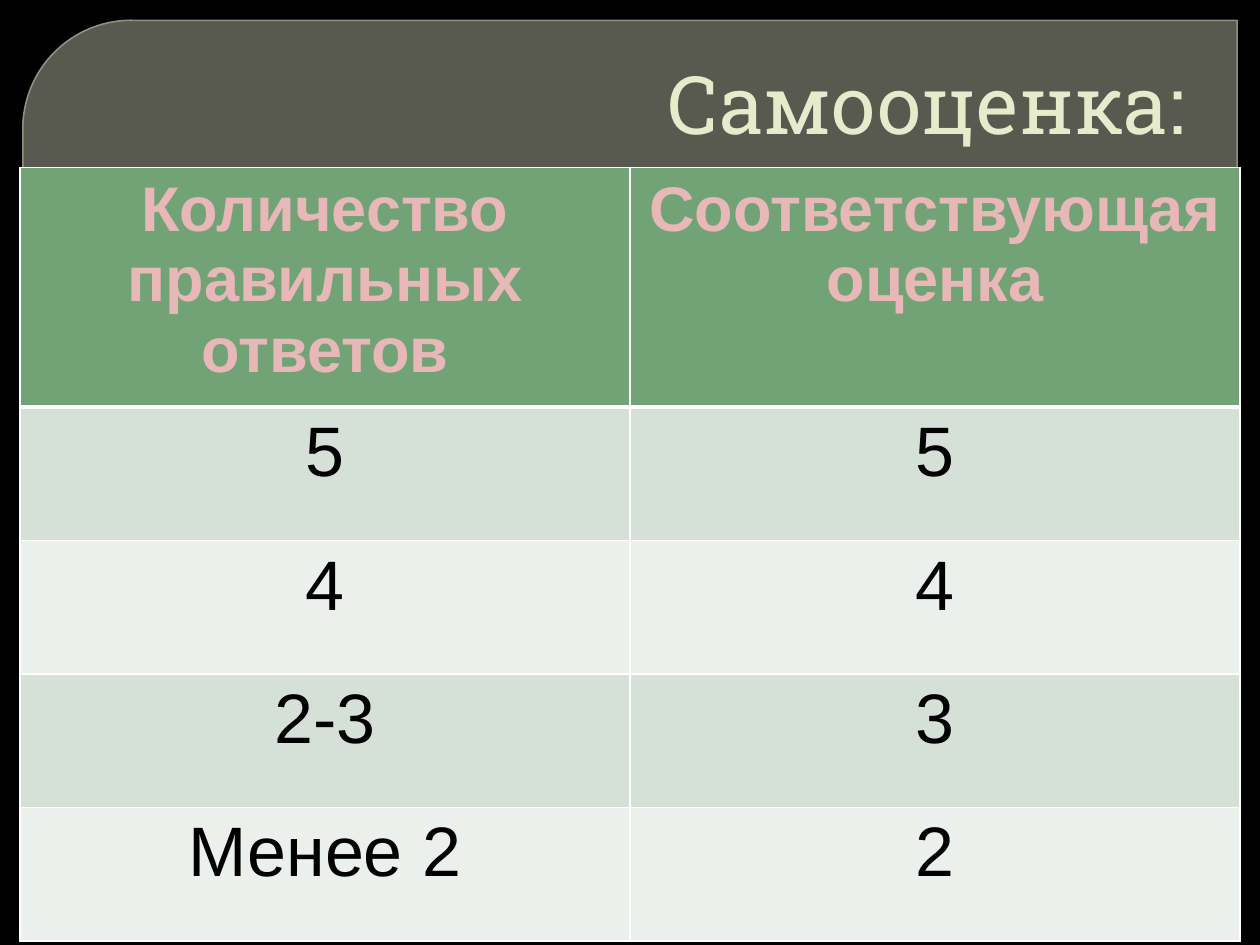
"""Build the self-assessment slide: a title above a grading table."""
import lxml.etree
import pptx
import pptx.dml.color
import pptx.enum.shapes
import pptx.enum.text
import pptx.oxml.ns
import pptx.util

TITLE = "Самооценка:"
HEAD = ("Количество правильных ответов", "Соответствующая оценка")
GRADES = [("5", "5"), ("4", "4"), ("2-3", "3"), ("Менее 2", "2")]

THEME = {
    "back": "000000", "panel": "888B7B", "edge": "9DA090",
    "title": "E7EACB", "head": "E8B7B7", "body": "000000",
    "green": "72A376", "bands": ("D5E0D6", "EBF0EC"), "grid": "FFFFFF",
    "serif": "Roboto Slab", "sans": "Arial",
    "big": 46, "mid": 36, "large": 40, "thin": 1, "thick": 3,
}

Cm, Pt = pptx.util.Cm, pptx.util.Pt
qn = pptx.oxml.ns.qn
ALIGN = pptx.enum.text.PP_ALIGN


def rgb(code):
    return pptx.dml.color.RGBColor.from_string(code)


def paint(fill, code):
    fill.solid()
    fill.fore_color.rgb = rgb(code)


def write(frame, text, *, font, size, color, align, bold=False):
    frame.word_wrap = True
    par = frame.paragraphs[0]
    par.alignment = align
    run = par.add_run()
    run.text = text
    run.font.name = font
    run.font.size = Pt(size)
    run.font.bold = bold
    run.font.color.rgb = rgb(color)


def fade(node, share):
    color = node.find(qn("a:solidFill")).find(qn("a:srgbClr"))
    lxml.etree.SubElement(color, qn("a:alpha"), val=str(share * 1000))


def border(cell, **widths):
    props = cell._tc.get_or_add_tcPr()
    for side in "LRTB":
        width = widths.get(side, THEME["thin"])
        line = lxml.etree.SubElement(props, qn("a:ln" + side), w=str(Pt(width)))
        fill = lxml.etree.SubElement(line, qn("a:solidFill"))
        lxml.etree.SubElement(fill, qn("a:srgbClr"), val=THEME["grid"])


def add_panel(slide):
    kind = pptx.enum.shapes.MSO_SHAPE.ROUND_2_DIAG_RECTANGLE
    panel = slide.shapes.add_shape(kind, Cm(0.46), Cm(0.41), Cm(24.48), Cm(18.24))
    panel.adjustments[0] = 0.12
    panel.adjustments[1] = 0
    panel.shadow.inherit = False
    paint(panel.fill, THEME["panel"])
    paint(panel.line.fill, THEME["edge"])
    panel.line.width = Pt(0.87)
    props = panel._element.spPr
    fade(props, 65)
    fade(props.find(qn("a:ln")), 88)


def add_title(slide):
    frame = slide.shapes.add_textbox(Cm(1.27), Cm(0.76), Cm(22.86), Cm(2.41)).text_frame
    frame.vertical_anchor = pptx.enum.text.MSO_ANCHOR.BOTTOM
    write(frame, TITLE, font=THEME["serif"], size=THEME["big"],
          color=THEME["title"], align=ALIGN.RIGHT)


def add_grades(slide):
    rows = [HEAD] + GRADES
    tall, short, wide = 4.52, 2.69, 12.3
    table = slide.shapes.add_table(
        len(rows), len(HEAD), Cm(0.4), Cm(3.38),
        Cm(wide * len(HEAD)), Cm(tall + short * len(GRADES))).table
    for col in table.columns:
        col.width = Cm(wide)
    for i, row in enumerate(rows):
        top = i == 0
        table.rows[i].height = Cm(tall if top else short)
        rule = {0: {"B": THEME["thick"]}, 1: {"T": THEME["thick"]}}.get(i, {})
        for j, text in enumerate(row):
            cell = table.cell(i, j)
            border(cell, **rule)
            paint(cell.fill, THEME["green"] if top else THEME["bands"][(i - 1) % 2])
            write(cell.text_frame, text, font=THEME["sans"],
                  size=THEME["mid" if top else "large"],
                  color=THEME["head" if top else "body"],
                  align=ALIGN.CENTER, bold=top)


def main():
    deck = pptx.Presentation()
    deck.slide_width, deck.slide_height = Cm(25.4), Cm(19.05)
    slide = deck.slides.add_slide(deck.slide_layouts[6])
    paint(slide.background.fill, THEME["back"])
    add_panel(slide)
    add_title(slide)
    add_grades(slide)
    deck.save("out.pptx")


if __name__ == "__main__":
    main()
